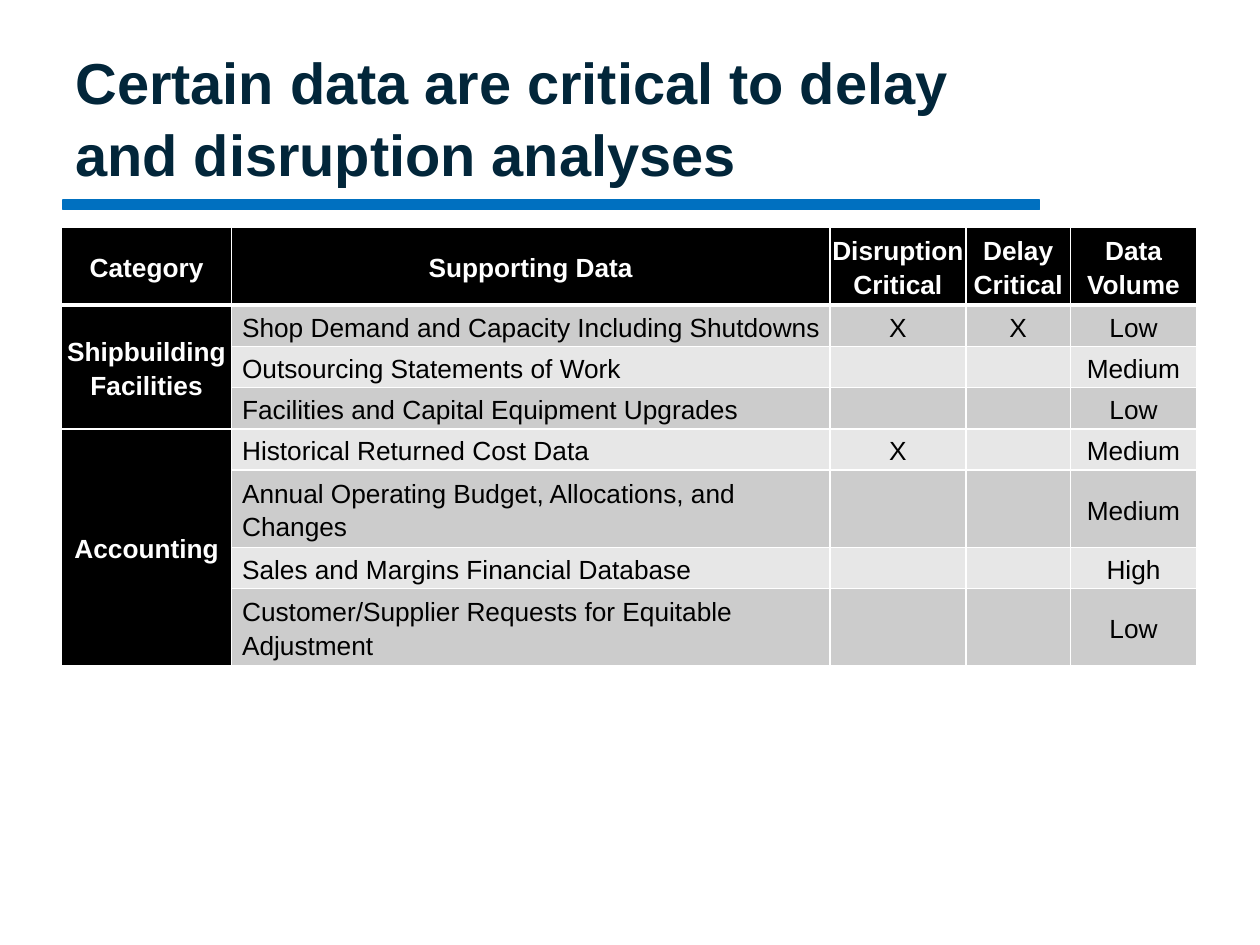
from dataclasses import dataclass

from lxml.etree import SubElement
from pptx import Presentation
from pptx.dml.color import RGBColor
from pptx.enum.shapes import MSO_SHAPE as Shape
from pptx.enum.text import MSO_ANCHOR as Anchor, PP_ALIGN as Align
from pptx.oxml import parse_xml
from pptx.oxml.ns import nsdecls, qn
from pptx.slide import Slide
from pptx.util import Cm, Pt

COLORS = {"title": "02263A", "rule": "0070C0", "head": "000000", "light": "FFFFFF",
          "dark": "000000", "odd": "CCCCCC", "even": "E7E7E7"}
WIDTHS = [3.43, 12.06, 2.74, 2.11, 2.54]
SINGLE, DOUBLE = 0.78, 1.45
HEADER = ["Category", "Supporting Data", "Disruption Critical", "Delay Critical", "Data Volume"]
GROUPS = {
    "Shipbuilding\nFacilities": [
        ("Shop Demand and Capacity Including Shutdowns", "X", "X", "Low"),
        ("Outsourcing Statements of Work", "", "", "Medium"),
        ("Facilities and Capital Equipment Upgrades", "", "", "Low"),
    ],
    "Accounting": [
        ("Historical Returned Cost Data", "X", "", "Medium"),
        ("Annual Operating Budget, Allocations, and Changes", "", "", "Medium"),
        ("Sales and Margins Financial Database", "", "", "High"),
        ("Customer/Supplier Requests for Equitable Adjustment", "", "", "Low"),
    ],
}
HEIGHTS = [1.42, SINGLE, SINGLE, SINGLE, SINGLE, DOUBLE, SINGLE, DOUBLE]


def rgb(name):
    """Return the named colour."""
    return RGBColor.from_string(COLORS[name])


@dataclass
class Painter:
    """Hold the text style and the current page."""

    page: Slide
    font: str = "Arial"
    cell_size: float = 15
    cell_spacing: float = 1.15

    def style(self, para, size, color, bold, spacing, align=Align.LEFT):
        """Format a paragraph and its runs."""
        para.alignment = align
        para.line_spacing = spacing
        for span in para.runs:
            span.font.name = self.font
            span.font.size = Pt(size)
            span.font.bold = bold
            span.font.color.rgb = rgb(color)

    def title(self, text, left, top, width, height):
        """Add the heading."""
        box = self.page.shapes.add_textbox(Cm(left), Cm(top), Cm(width), Cm(height))
        frame = box.text_frame
        frame.word_wrap = True
        frame.vertical_anchor = Anchor.MIDDLE
        frame.text = text
        self.style(frame.paragraphs[0], 33, "title", True, 1.04)

    def bar(self, color, left, top, width, height):
        """Add a solid bar."""
        bar = self.page.shapes.add_shape(Shape.RECTANGLE, Cm(left), Cm(top), Cm(width), Cm(height))
        bar.shadow.inherit = False
        bar.fill.solid()
        bar.fill.fore_color.rgb = rgb(color)
        bar.line.color.rgb = rgb(color)
        bar.line.width = Pt(0.75)

    def table(self, left, top, widths, heights):
        """Add an empty table with the given grid."""
        frame = self.page.shapes.add_table(len(heights), len(widths), Cm(left), Cm(top),
                                           Cm(sum(widths)), Cm(sum(heights)))
        table = frame.table
        for column, width in zip(table.columns, widths):
            column.width = Cm(width)
        for row, height in zip(table.rows, heights):
            row.height = Cm(height)
        return table

    def cell(self, cell, text, fill, heading=False, indented=False, top=1, bottom=1):
        """Fill, border and label one cell."""
        cell.fill.solid()
        cell.fill.fore_color.rgb = rgb(fill)
        cell.vertical_anchor = Anchor.MIDDLE
        cell.margin_left = cell.margin_right = Cm(0.03)
        cell.margin_top = cell.margin_bottom = Cm(0.05)
        self.borders(cell, {"L": 1, "R": 1, "T": top, "B": bottom})
        cell.text = text
        for para in cell.text_frame.paragraphs:
            self.style(para, self.cell_size, "light" if heading else "dark", heading,
                       self.cell_spacing, Align.LEFT if indented else Align.CENTER)
            if indented:
                para._p.get_or_add_pPr().set("marL", str(Cm(0.18)))
            if not text:
                SubElement(para._p, qn("a:endParaRPr"), sz=str(self.cell_size * 100))

    def borders(self, cell, weights):
        """Draw white lines around a cell."""
        properties = cell._tc.get_or_add_tcPr()
        for index, (side, weight) in enumerate(weights.items()):
            properties.insert(index, parse_xml(
                f'<a:ln{side} {nsdecls("a")} w="{Pt(weight)}"><a:solidFill>'
                f'<a:srgbClr val="{COLORS["light"]}"/></a:solidFill></a:ln{side}>'))


def main():
    """Build and save the deck."""
    deck = Presentation()
    deck.slide_width, deck.slide_height = Cm(25.4), Cm(19.05)
    painter = Painter(deck.slides.add_slide(deck.slide_layouts[6]))
    painter.bar("rule", 1.27, 4.03, 19.69, 0.2)
    painter.title("Certain data are critical to delay and disruption analyses",
                  1.27, 0.76, 19.89, 3.18)

    table = painter.table(1.24, 4.59, WIDTHS, HEIGHTS)
    for column, label in enumerate(HEADER):
        painter.cell(table.cell(0, column), label, "head", heading=True, bottom=3)
    row = 1
    for category, entries in GROUPS.items():
        first = row
        for entry in entries:
            top = 3 if row == 1 else 1
            label = category if row == first else ""
            painter.cell(table.cell(row, 0), label, "head", heading=True, top=top)
            for column, text in enumerate(entry, 1):
                painter.cell(table.cell(row, column), text, "odd" if row % 2 else "even",
                             indented=column == 1, top=top)
            row += 1
        table.cell(first, 0).merge(table.cell(row - 1, 0))
    deck.save("out.pptx")


if __name__ == "__main__":
    main()
